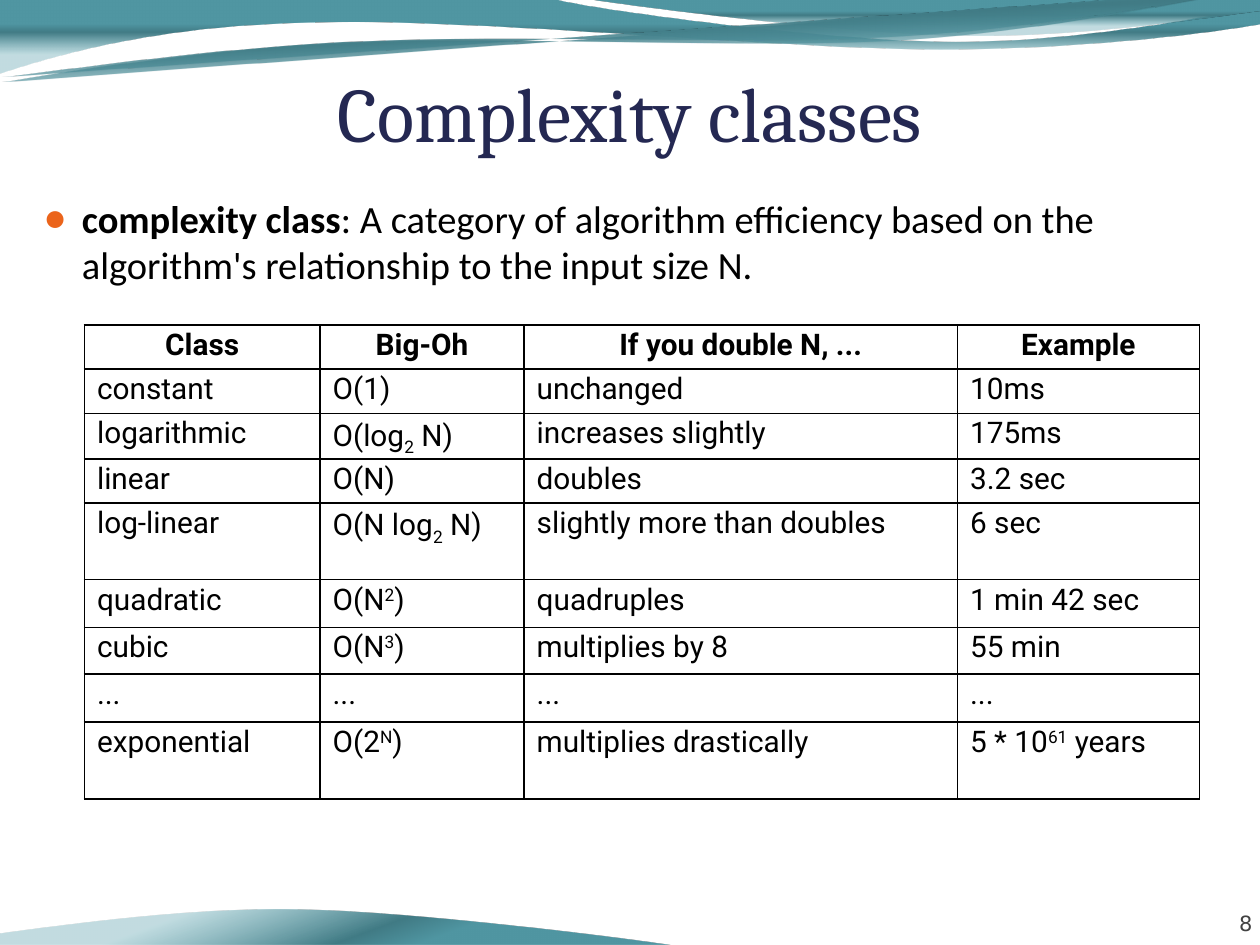
"""Build a slide that defines complexity classes and compares them in a table."""
from dataclasses import dataclass
from math import cos, radians, sin

from pptx import Presentation
from pptx.dml.color import RGBColor
from pptx.enum.text import MSO_ANCHOR, MSO_AUTO_SIZE, PP_ALIGN
from pptx.oxml import parse_xml
from pptx.oxml.ns import nsdecls, qn
from pptx.util import Inches, Pt


@dataclass(frozen=True)
class Theme:
    title_color: str = "242852"
    text_color: str = "000000"
    number_color: str = "424242"
    bullet_color: str = "EB641B"
    wave_stops: tuple = ((33, "5096A2", 100), (44, "417B85", 100), (74, "5AA2AE", 37))
    title_font: str = "Cambria"
    body_font: str = "Calibri"
    table_font: str = "Roboto"
    number_font: str = "DejaVu Sans"
    title_size: int = 44
    body_size: int = 22
    table_size: int = 17
    number_size: int = 12


theme = Theme()


def format_run(run, font_name, size, color, bold=False):
    run.font.name = font_name
    run.font.size = Pt(size)
    run.font.bold = bold
    run.font.color.rgb = RGBColor.from_string(color)


def turn_point(point, center, angle):
    across, down = point[0] - center[0], point[1] - center[1]
    return (Inches(center[0] + across * cos(angle) - down * sin(angle)),
            Inches(center[1] + across * sin(angle) + down * cos(angle)))


presentation = Presentation()
presentation.slide_width = Inches(10)
presentation.slide_height = Inches(7.5)
slide = presentation.slides.add_slide(presentation.slide_layouts[1])
title, body = slide.shapes.title, slide.placeholders[1]

number_box = slide.shapes.add_textbox(Inches(9.11), Inches(7.03), Inches(0.83), Inches(0.4))
number_frame = number_box.text_frame
number_frame.word_wrap = True
number_frame.vertical_anchor = MSO_ANCHOR.BOTTOM
number_frame.margin_left = number_frame.margin_right = 0
number_frame.margin_top = number_frame.margin_bottom = 0
number_frame.text = "8"
number_frame.paragraphs[0].alignment = PP_ALIGN.RIGHT
format_run(number_frame.paragraphs[0].runs[0], theme.number_font, theme.number_size, theme.number_color)

waves = [
    ([[(0, 0)], [(4.4, 0)], [(4.76, 0.09), (6.64, 0.33), (7.58, 0.33)],
      [(8.53, 0.33), (9.58, 0.14), (10, 0.05)], [(10.01, 0.19)],
      [(9.83, 0.23), (8.7, 0.39), (7.46, 0.39)], [(6.22, 0.39), (3.82, 0.15), (2.57, 0.18)],
      [(1.29, 0.19), (0.46, 0.43), (-0.01, 0.58)], [(0, 0)]], True, 0, 90),
    ([[(4.67, 0)], [(4.98, 0.05), (6.74, 0.27), (7.63, 0.28)],
      [(8.52, 0.3), (9.61, 0.14), (10, 0.09)], [(10, 0)], [(4.67, 0)]], True, 0, 90),
    ([[(0.01, 0.65)], [(0.5, 0.57), (1.6, 0.39), (2.79, 0.34)],
      [(3.98, 0.28), (5.93, 0.39), (7.14, 0.32)], [(8.34, 0.25), (9.41, 0), (10, -0.08)]], False, 357.3, 90),
    ([[(0.01, 0.61)], [(0.49, 0.56), (1.66, 0.38), (2.85, 0.33)],
      [(4.04, 0.27), (5.97, 0.36), (7.16, 0.29)], [(8.36, 0.22), (9.41, -0.01), (10, -0.08)]], False, 357.3, 90),
    ([[(5.32, 7.5)], [(5.01, 7.45), (3.25, 7.23), (2.36, 7.22)],
      [(1.47, 7.2), (0.38, 7.36), (-0.01, 7.41)], [(-0.01, 7.5)], [(5.32, 7.5)]], True, 180, 70),
]
gradient_stops = "".join(
    f'<a:gs pos="{position * 1000}"><a:srgbClr val="{color}"><a:alpha val="{opacity * 1000}"/></a:srgbClr></a:gs>'
    for position, color, opacity in theme.wave_stops
)
for segments, closed, rotation, gradient_angle in waves:
    anchors = [segment[-1] for segment in segments]
    center = [(min(values) + max(values)) / 2 for values in zip(*anchors)]
    segments = [[turn_point(point, center, radians(-rotation)) for point in segment] for segment in segments]
    builder = slide.shapes.build_freeform(*segments[0][0])
    builder.add_line_segments([segment[-1] for segment in segments[1:]], close=closed)
    wave = builder.convert_to_shape()
    outline = wave.element.find(".//" + qn("a:path"))
    for line, segment in zip(outline.findall(qn("a:lnTo")), segments[1:]):
        if len(segment) == 3:
            points = "".join(f'<a:pt x="{x - wave.left}" y="{y - wave.top}"/>' for x, y in segment)
            outline.replace(line, parse_xml(f'<a:cubicBezTo {nsdecls("a")}>{points}</a:cubicBezTo>'))
    wave.rotation = rotation
    wave.shadow.inherit = False
    wave.line.fill.background()
    wave.fill.gradient()
    properties = wave.element.spPr
    properties.replace(properties.find(qn("a:gradFill")), parse_xml(
        f'<a:gradFill {nsdecls("a")} rotWithShape="1"><a:gsLst>{gradient_stops}</a:gsLst>'
        f'<a:lin ang="{gradient_angle * 60000}" scaled="0"/></a:gradFill>'))

slide.shapes.element.append(title.element)
title.left, title.top, title.width, title.height = Inches(0.5), Inches(0.48), Inches(9), Inches(0.77)
title_frame = title.text_frame
title_frame.text = "Complexity classes"
title_frame.auto_size = MSO_AUTO_SIZE.NONE
title_frame.vertical_anchor = MSO_ANCHOR.BOTTOM
title_frame.margin_left = title_frame.margin_right = title_frame.margin_bottom = 0
title_frame.margin_top = Inches(0.05)
title_frame.paragraphs[0].alignment = PP_ALIGN.CENTER
format_run(title_frame.paragraphs[0].runs[0], theme.title_font, theme.title_size, theme.title_color)

slide.shapes.element.append(body.element)
body.left, body.top, body.width, body.height = Inches(0.25), Inches(1.5), Inches(9.75), Inches(5.67)
body.text_frame.auto_size = MSO_AUTO_SIZE.NONE
paragraph = body.text_frame.paragraphs[0]
paragraph_properties = paragraph._p.get_or_add_pPr()
paragraph_properties.set("marL", str(Inches(0.3)))
paragraph_properties.set("indent", str(Inches(-0.3)))
for bullet in (
    f'<a:buClr {nsdecls("a")}><a:srgbClr val="{theme.bullet_color}"/></a:buClr>',
    f'<a:buSzPct {nsdecls("a")} val="95000"/>',
    f'<a:buFont {nsdecls("a")} typeface="{theme.body_font}"/>',
    f'<a:buChar {nsdecls("a")} char="●"/>',
):
    paragraph_properties.append(parse_xml(bullet))
paragraph.space_before = Pt(0)
for text, bold in (
    ("complexity class", True),
    (": A category of algorithm efficiency based on the algorithm's relationship to the input size N.", False),
):
    run = paragraph.add_run()
    run.text = text
    format_run(run, theme.body_font, theme.body_size, theme.text_color, bold)

column_widths = [1.87, 1.62, 3.44, 1.92]
row_heights = [0.35, 0.35, 0.35, 0.35, 0.61, 0.38, 0.37, 0.38, 0.61]
baselines = {"_": "-25000", "^": "30000"}
rows = [
    ("Class", "Big-Oh", "If you double N, ...", "Example"),
    ("constant", "O(1)", "unchanged", "10ms"),
    ("logarithmic", "O(log|_2| N)", "increases slightly", "175ms"),
    ("linear", "O(N)", "doubles", "3.2 sec"),
    ("log-linear", "O(N log|_2| N)", "slightly more than doubles", "6 sec"),
    ("quadratic", "O(N|^2|)", "quadruples", "1 min 42 sec"),
    ("cubic", "O(N|^3|)", "multiplies by 8", "55 min"),
    ("...",) * 4,
    ("exponential", "O(2|^N|)", "multiplies drastically", "5 * 10|^61| years"),
]
table = slide.shapes.add_table(
    len(rows), len(column_widths), Inches(0.67), Inches(2.58),
    Inches(sum(column_widths)), Inches(sum(row_heights))).table
table.first_row = table.horz_banding = False
for column, width in zip(table.columns, column_widths):
    column.width = Inches(width)
for row_index, (row, height) in enumerate(zip(rows, row_heights)):
    table.rows[row_index].height = Inches(height)
    for column_index, cell_text in enumerate(row):
        cell = table.cell(row_index, column_index)
        cell.margin_left = cell.margin_right = Inches(0.1)
        cell.margin_top = cell.margin_bottom = Inches(0.04)
        paragraph = cell.text_frame.paragraphs[0]
        paragraph.line_spacing = 0.9
        paragraph.alignment = PP_ALIGN.CENTER if row_index == 0 else PP_ALIGN.LEFT
        for part in cell_text.split("|"):
            run = paragraph.add_run()
            run.text = part.lstrip("_^")
            format_run(run, theme.table_font, theme.table_size, theme.text_color, row_index == 0)
            if part[0] in baselines:
                run._r.get_or_add_rPr().set("baseline", baselines[part[0]])
        for side in ("lnL", "lnR", "lnT", "lnB"):
            cell._tc.get_or_add_tcPr().append(parse_xml(
                f'<a:{side} {nsdecls("a")} w="{Pt(1)}"><a:solidFill>'
                f'<a:srgbClr val="{theme.text_color}"/></a:solidFill></a:{side}>'))
        cell.fill.background()

presentation.save("out.pptx")
